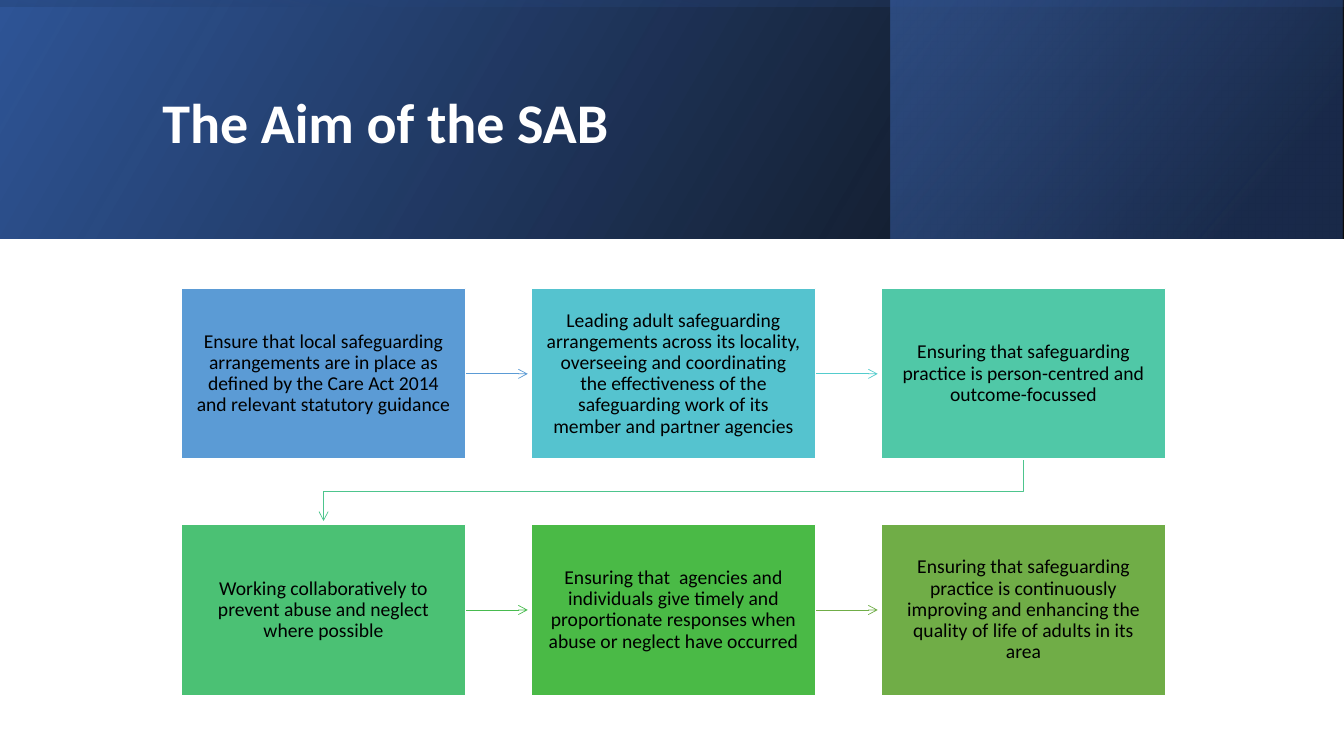
from dataclasses import dataclass

from pptx import Presentation
from pptx.dml.color import RGBColor as Rgb
from pptx.enum.shapes import MSO_CONNECTOR as Link, MSO_SHAPE as Kind
from pptx.enum.text import MSO_ANCHOR as Anchor, MSO_AUTO_SIZE as Auto, PP_ALIGN as Align
from pptx.oxml import parse_xml
from pptx.oxml.ns import nsdecls, qn
from pptx.util import Cm, Pt

HUES = {
    "white": "FFFFFF", "black": "000000",
    "navy": "203864", "deep": "2F5597", "royal": "4472C4",
    "blue": "5B9BD5", "cyan": "55C3CF", "teal": "50C8A7",
    "mint": "4BC174", "green": "4ABA46", "olive": "70AD47",
    "aqua": "54CCCD", "jade": "4DC58D", "leaf": "48BB4F",
}
FONT = "Calibri"
WIDE, HIGH = 33.87, 19.05
HEAD = 6.02  # height of the header band

# Grid of steps
LEFT, TOP = 4.57, 7.27
BOX_W, BOX_H = 7.17, 4.3
STEP_X, STEP_Y = 8.82, 5.95
COLS = 3
REACH = 1.56  # length of an arrow


@dataclass
class Stop:
    pos: int
    hue: str
    alpha: int


@dataclass
class Band:
    left: float
    top: float
    wide: float
    high: float
    angle: int
    stops: tuple[Stop, Stop]
    turn: int = 0


@dataclass
class Step:
    text: str
    fill: str
    arrow: str = ""


BANDS = [
    Band(0, 0, WIDE, HEAD, 330, (Stop(0, "black", 96), Stop(100, "deep", 100))),
    Band(22.45, 0, 11.39, HEAD, 320, (Stop(19, "navy", 68), Stop(100, "royal", 48))),
    Band((WIDE - HEAD) / 2, (HEAD - WIDE) / 2, HEAD, WIDE, 350,
         (Stop(23, "deep", 16), Stop(99, "black", 45)), 270),
]
STEPS = [
    Step("Ensure that local safeguarding arrangements are in place as defined by "
         "the Care Act 2014 and relevant statutory guidance", "blue", "blue"),
    Step("Leading adult safeguarding arrangements across its locality, overseeing "
         "and coordinating the effectiveness of the safeguarding work of its "
         "member and partner agencies", "cyan", "aqua"),
    Step("Ensuring that safeguarding practice is person-centred and "
         "outcome-focussed", "teal", "jade"),
    Step("Working collaboratively to prevent abuse and neglect where possible",
         "mint", "leaf"),
    Step("Ensuring that  agencies and individuals give timely and proportionate "
         "responses when abuse or neglect have occurred", "green", "olive"),
    Step("Ensuring that safeguarding practice is continuously improving and "
         "enhancing the quality of life of adults in its area", "olive"),
]


def color(name: str) -> Rgb:
    return Rgb.from_string(HUES[name])


def write(frame, text: str, size: int, hue: str, align, bold: bool = False) -> None:
    frame.text = text
    frame.word_wrap = True
    frame.auto_size = Auto.NONE
    frame.vertical_anchor = Anchor.MIDDLE
    para = frame.paragraphs[0]
    para.alignment, para.line_spacing = align, 0.9
    font = para.font
    font.name, font.size, font.bold = FONT, Pt(size), bold
    font.color.rgb = color(hue)


def add_band(shapes, band: Band) -> None:
    rect = shapes.add_shape(Kind.RECTANGLE, Cm(band.left), Cm(band.top),
                            Cm(band.wide), Cm(band.high))
    rect.rotation = band.turn
    props = rect.element.spPr
    props.find(qn("a:xfrm")).set("flipH", "1")
    stops = "".join(
        f'<a:gs pos="{s.pos * 1000}"><a:srgbClr val="{HUES[s.hue]}">'
        f'<a:alpha val="{s.alpha * 1000}"/></a:srgbClr></a:gs>' for s in band.stops)
    props.append(parse_xml(
        f'<a:gradFill {nsdecls("a")}><a:gsLst>{stops}</a:gsLst>'
        f'<a:lin ang="{band.angle * 60000}" scaled="0"/></a:gradFill>'))
    rect.line.fill.background()
    rect.shadow.inherit = False


def add_box(shapes, step: Step, left: float, top: float) -> None:
    box = shapes.add_shape(Kind.RECTANGLE, Cm(left), Cm(top), Cm(BOX_W), Cm(BOX_H))
    box.shadow.inherit = False
    box.fill.solid()
    box.fill.fore_color.rgb = color(step.fill)
    box.line.color.rgb = color("white")
    box.line.width = Pt(1)
    frame = box.text_frame
    frame.margin_left = frame.margin_right = Cm(0.35)
    frame.margin_top = frame.margin_bottom = Cm(0.37)
    write(frame, step.text, 14, "black", Align.CENTER)


def style_arrow(line, hue: str) -> None:
    line.line.color.rgb = color(hue)
    line.line.width = Pt(0.5)
    props = line.element.spPr
    props.find(qn("a:ln")).append(parse_xml(f'<a:tailEnd {nsdecls("a")} type="arrow"/>'))
    props.append(parse_xml(f'<a:effectLst {nsdecls("a")}/>'))


def add_arrow(shapes, hue: str, left: float, mid: float) -> None:
    line = shapes.add_connector(Link.STRAIGHT, Cm(left), Cm(mid),
                                Cm(left + REACH), Cm(mid))
    style_arrow(line, hue)


def add_turn(shapes, hue: str, start: float, top: float) -> None:
    """Run from under the last box of a row to above the first of the next."""
    end, mid = LEFT + BOX_W / 2, top + (STEP_Y - BOX_H) / 2
    pen = shapes.build_freeform(Cm(start), Cm(top))
    pen.add_line_segments([(Cm(start), Cm(mid)), (Cm(end), Cm(mid)),
                           (Cm(end), Cm(top + REACH))], close=False)
    line = pen.convert_to_shape()
    line.fill.background()
    style_arrow(line, hue)


def main() -> None:
    deck = Presentation()
    deck.slide_width, deck.slide_height = Cm(WIDE), Cm(HIGH)
    slide = deck.slides.add_slide(deck.slide_layouts[5])
    shapes = slide.shapes

    # Header
    for band in BANDS:
        add_band(shapes, band)

    # Title, raised above the header
    title = shapes.title
    title.left, title.top, title.width, title.height = Cm(3.84), Cm(0.97), Cm(27), Cm(4.37)
    write(title.text_frame, "The Aim of the SAB", 40, "white", Align.LEFT, True)
    title.element.getparent().append(title.element)

    # Steps and the arrows between them
    for i, step in enumerate(STEPS):
        row, col = divmod(i, COLS)
        left, top = LEFT + col * STEP_X, TOP + row * STEP_Y
        if step.arrow and col < COLS - 1:
            add_arrow(shapes, step.arrow, left + BOX_W, top + BOX_H / 2)
        elif step.arrow:
            add_turn(shapes, step.arrow, left + BOX_W / 2, top + BOX_H)
        add_box(shapes, step, left, top)

    deck.save("out.pptx")


if __name__ == "__main__":
    main()
